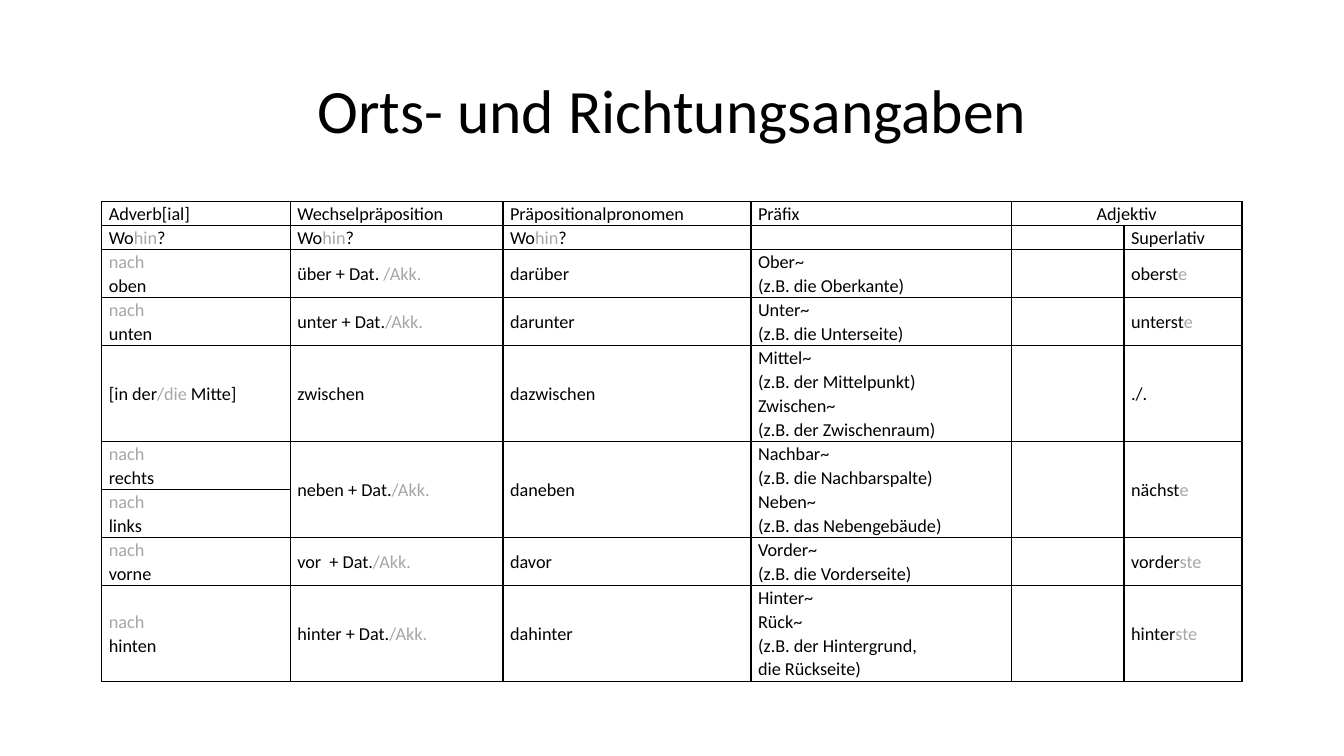
from copy import deepcopy

from lxml.etree import SubElement
from pptx import Presentation
from pptx.dml.color import RGBColor
from pptx.enum.text import MSO_ANCHOR as Anchor, PP_ALIGN as Align
from pptx.oxml import parse_xml
from pptx.oxml.ns import nsdecls, qn
from pptx.util import Inches, Pt

BLACK = RGBColor(0x00, 0x00, 0x00)
GREY = RGBColor(0xA6, 0xA6, 0xA6)
FONT = "Calibri"
TEXT_SIZE = 13
COLUMN_WIDTHS = [1.87, 2.11, 2.46, 2.58, 1.12, 1.17]
ROW_LINES = [1, 1, 2, 2, 4, 2, 2, 2, 4]
LINE_HEIGHT = 4.76 / sum(ROW_LINES)

# "|" switches between black and grey, "\n" starts a paragraph, "\v" breaks a line
WORDS = [
    ["Adverb[ial]", "Wechselpräposition", "Präpositionalpronomen", "Präfix", "Adjektiv", ""],
    ["Wo|hin|?", "Wo|hin|?", "Wo|hin|?", "", "", "Superlativ"],
    ["|nach\v|oben", "über + Dat. |/Akk.", "darüber",
     "Ober~\v(z.B. die Oberkante)", "", "oberst|e"],
    ["|nach\v|unten", "unter + Dat.|/Akk.", "darunter",
     "Unter~\v(z.B. die Unterseite)", "", "unterst|e"],
    ["[in der|/die| Mitte]", "zwischen", "dazwischen",
     "Mittel~\v(z.B. der Mittelpunkt)\nZwischen~\v(z.B. der Zwischenraum)", "", "./."],
    ["|nach\v|rechts", "neben + Dat.|/Akk.", "daneben",
     "Nachbar~\v(z.B. die Nachbarspalte)\nNeben~\n(z.B. das Nebengebäude)", "", "nächst|e"],
    ["|nach\v|links", "", "", "", "", ""],
    ["|nach\v|vorne", "vor  + Dat.|/Akk.", "davor",
     "Vorder~\n(z.B. die Vorderseite)", "", "vorder|ste"],
    ["|nach\n|hinten", "hinter + Dat.|/Akk.", "dahinter",
     "Hinter~\vRück~\n(z.B. der Hintergrund,\vdie Rückseite)", "", "hinter|ste"],
]


def write_words(cell, words):
    """Fill a cell with marked-up words; the grey switch resets at each paragraph."""
    frame = cell.text_frame
    for number, line in enumerate(words.split("\n")):
        paragraph = frame.add_paragraph() if number else frame.paragraphs[0]
        paragraph.line_spacing = 1.07
        # a leading switch that closes the grey of the paragraph before is dropped
        if number and line.startswith("|"):
            line = line[1:]
        for switch, piece in enumerate(line.split("|")):
            for part_number, part in enumerate(piece.split("\v")):
                if part_number:
                    paragraph.add_line_break()
                    paragraph._p[-1].append(deepcopy(run._r.rPr))
                if part:
                    run = paragraph.add_run()
                    run.text = part
                    run.font.name = FONT
                    run.font.size = Pt(TEXT_SIZE)
                    run.font.color.rgb = GREY if switch % 2 else BLACK
        SubElement(paragraph._p, qn("a:endParaRPr"), sz=str(TEXT_SIZE * 100))


def draw_borders(cell):
    properties = cell._tc.get_or_add_tcPr()
    for position, side in enumerate("LRTB"):
        properties.insert(position, parse_xml(
            f'<a:ln{side} {nsdecls("a")} w="{Pt(1)}"><a:solidFill>'
            f'<a:srgbClr val="{BLACK}"/></a:solidFill></a:ln{side}>'))


deck = Presentation()
deck.slide_width, deck.slide_height = Inches(13.33), Inches(7.5)
slide = deck.slides.add_slide(deck.slide_layouts[5])

heading = slide.shapes.title
heading.left, heading.top = Inches(0.92), Inches(0.4)
heading.width, heading.height = Inches(11.5), Inches(1.45)
heading.text_frame.text = "Orts- und Richtungsangaben"
heading.text_frame.vertical_anchor = Anchor.MIDDLE
heading_line = heading.text_frame.paragraphs[0]
heading_line.alignment = Align.CENTER
heading_line.line_spacing = 0.9
heading_font = heading_line.runs[0].font
heading_font.name, heading_font.size = FONT, Pt(44)
heading_font.color.rgb = BLACK

places = slide.shapes.add_table(
    len(ROW_LINES), len(COLUMN_WIDTHS), Inches(1.01), Inches(2),
    Inches(sum(COLUMN_WIDTHS)), Inches(LINE_HEIGHT * sum(ROW_LINES))).table
places.first_row = places.horz_banding = False
for column, width in zip(places.columns, COLUMN_WIDTHS):
    column.width = Inches(width)

CELL_FORMAT = {
    "margin_left": Inches(0.07), "margin_right": Inches(0.07),
    "margin_top": 0, "margin_bottom": 0, "vertical_anchor": Anchor.MIDDLE,
}
for row, lines, row_words in zip(places.rows, ROW_LINES, WORDS):
    row.height = Inches(LINE_HEIGHT * lines)
    for cell, words in zip(row.cells, row_words):
        for name, value in CELL_FORMAT.items():
            setattr(cell, name, value)
        cell.fill.background()
        draw_borders(cell)
        write_words(cell, words)

adjective = places.cell(0, 4)
adjective.merge(places.cell(0, 5))
adjective.text_frame.paragraphs[0].alignment = Align.CENTER
for column_number in range(1, len(COLUMN_WIDTHS)):
    places.cell(5, column_number).merge(places.cell(6, column_number))

deck.save("out.pptx")
